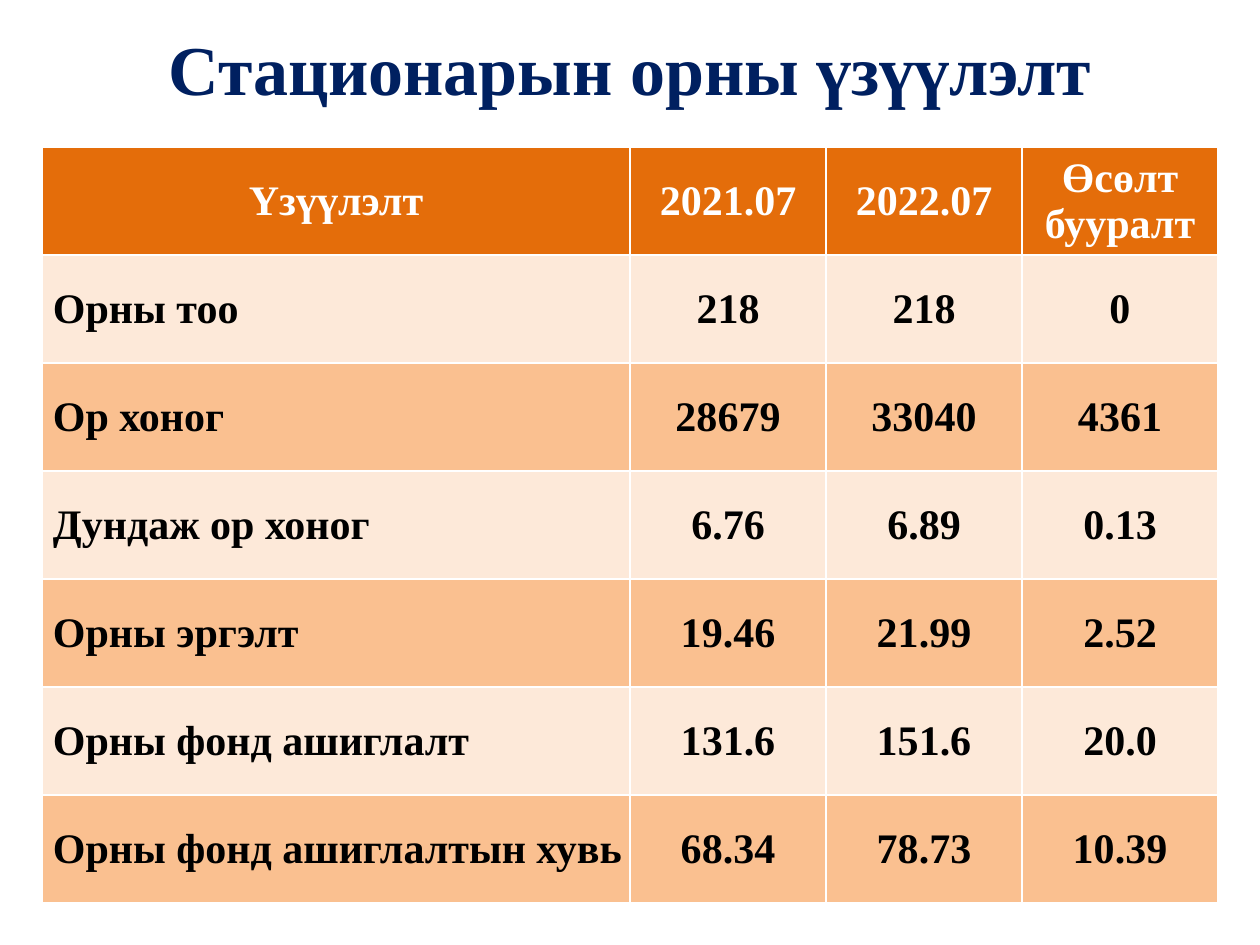
from lxml.etree import SubElement
from pptx import Presentation
from pptx.dml.color import RGBColor
from pptx.enum.text import MSO_ANCHOR, PP_ALIGN
from pptx.oxml.ns import qn
from pptx.util import Pt

FONT = "Times New Roman"
NAVY = RGBColor(0x00, 0x20, 0x60)
ORANGE = RGBColor(0xE4, 0x6D, 0x0A)
CREAM = RGBColor(0xFD, 0xE9, 0xD9)
PEACH = RGBColor(0xFA, 0xC0, 0x90)
WHITE = RGBColor(0xFF, 0xFF, 0xFF)
BLACK = RGBColor(0x00, 0x00, 0x00)

ROWS = [
    ("Үзүүлэлт", "2021.07", "2022.07", "Өсөлт бууралт"),
    ("Орны тоо", "218", "218", "0"),
    ("Ор хоног", "28679", "33040", "4361"),
    ("Дундаж ор хоног", "6.76", "6.89", "0.13"),
    ("Орны эргэлт", "19.46", "21.99", "2.52"),
    ("Орны фонд ашиглалт", "131.6", "151.6", "20.0"),
    ("Орны фонд ашиглалтын хувь", "68.34", "78.73", "10.39"),
]


def px(n):
    return round(n * 914400 / 126)


def format_paragraph(p, size, color, align):
    p.alignment = align
    p.font.name = FONT
    p.font.size = Pt(size)
    p.font.bold = True
    p.font.color.rgb = color


def set_borders(cell, widths):
    tc_pr = cell._tc.get_or_add_tcPr()
    for side, width in widths.items():
        ln = SubElement(tc_pr, qn(f"a:ln{side}"), w=str(Pt(width)))
        fill = SubElement(ln, qn("a:solidFill"))
        SubElement(fill, qn("a:srgbClr"), val=str(WHITE))


def add_title(s, left, top, width, height):
    title = s.shapes.title
    title.left, title.top = px(left), px(top)
    title.width, title.height = px(width), px(height)
    tf = title.text_frame
    tf.text = "Стационарын орны үзүүлэлт"
    tf.vertical_anchor = MSO_ANCHOR.MIDDLE
    format_paragraph(tf.paragraphs[0], 40, NAVY, PP_ALIGN.CENTER)


def format_cell(cell, text, row, col):
    header = row == 0
    label = col == 0 and not header
    cell.text = text
    cell.vertical_anchor = MSO_ANCHOR.MIDDLE
    cell.margin_left = px(11 if label else 1)
    cell.margin_top = cell.margin_right = px(1)
    cell.margin_bottom = 0
    format_paragraph(cell.text_frame.paragraphs[0], 24,
                     WHITE if header else BLACK,
                     PP_ALIGN.LEFT if label else PP_ALIGN.CENTER)
    set_borders(cell, {"L": 1, "R": 1, "T": 1.5 if row == 1 else 1,
                       "B": 1.5 if header else 1})
    cell.fill.solid()
    cell.fill.fore_color.rgb = ORANGE if header else (PEACH, CREAM)[row % 2]


def add_indicator_table(s, left, top, width, height):
    table = s.shapes.add_table(len(ROWS), len(ROWS[0]), px(left), px(top),
                               px(width), px(height)).table
    value_width = width // 6
    label_width = width - 3 * value_width
    for col, column in enumerate(table.columns):
        column.width = px(value_width if col else label_width)
    for r, values in enumerate(ROWS):
        table.rows[r].height = px(height // len(ROWS))
        for c, text in enumerate(values):
            format_cell(table.cell(r, c), text, r, c)


def main():
    prs = Presentation()
    prs.slide_width, prs.slide_height = px(1260), px(945)
    s = prs.slides.add_slide(prs.slide_layouts[5])
    add_title(s, 63, 0, 1134, 136)
    add_indicator_table(s, 42, 147, 1176, 756)
    prs.save("out.pptx")


if __name__ == "__main__":
    main()
